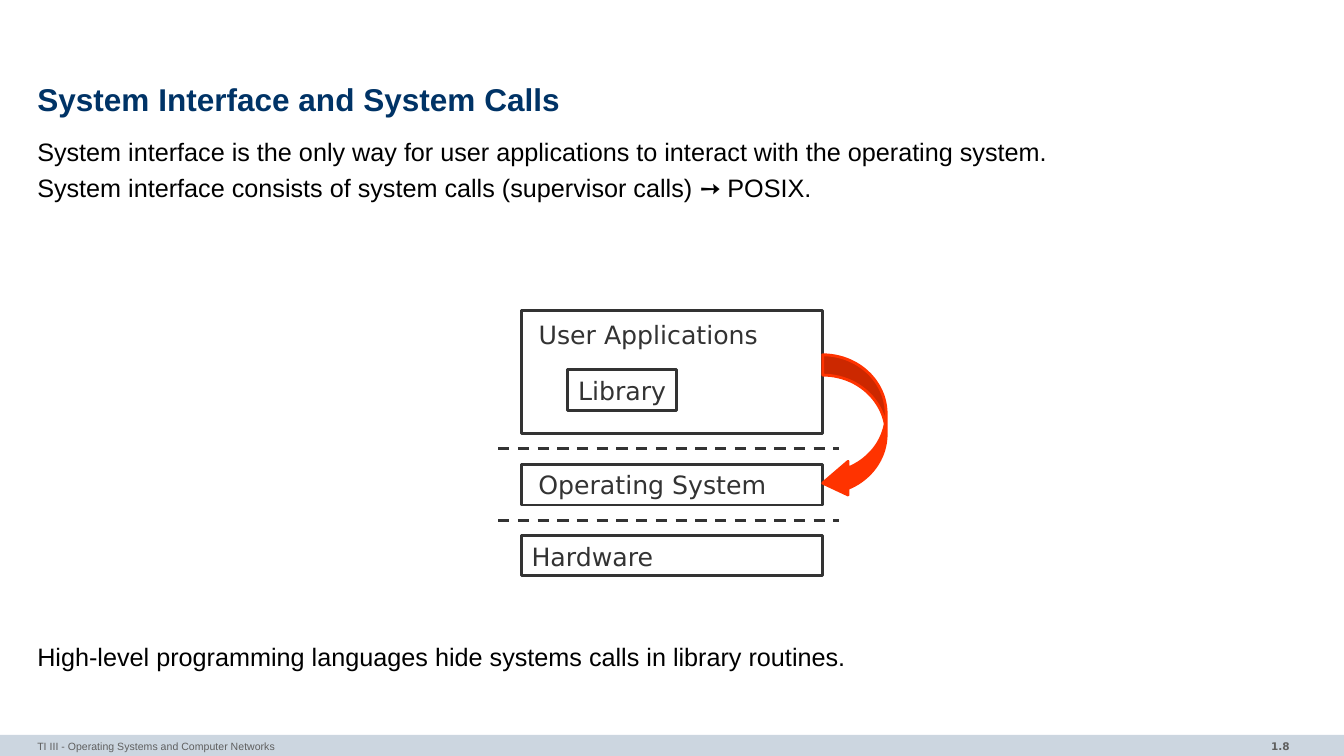
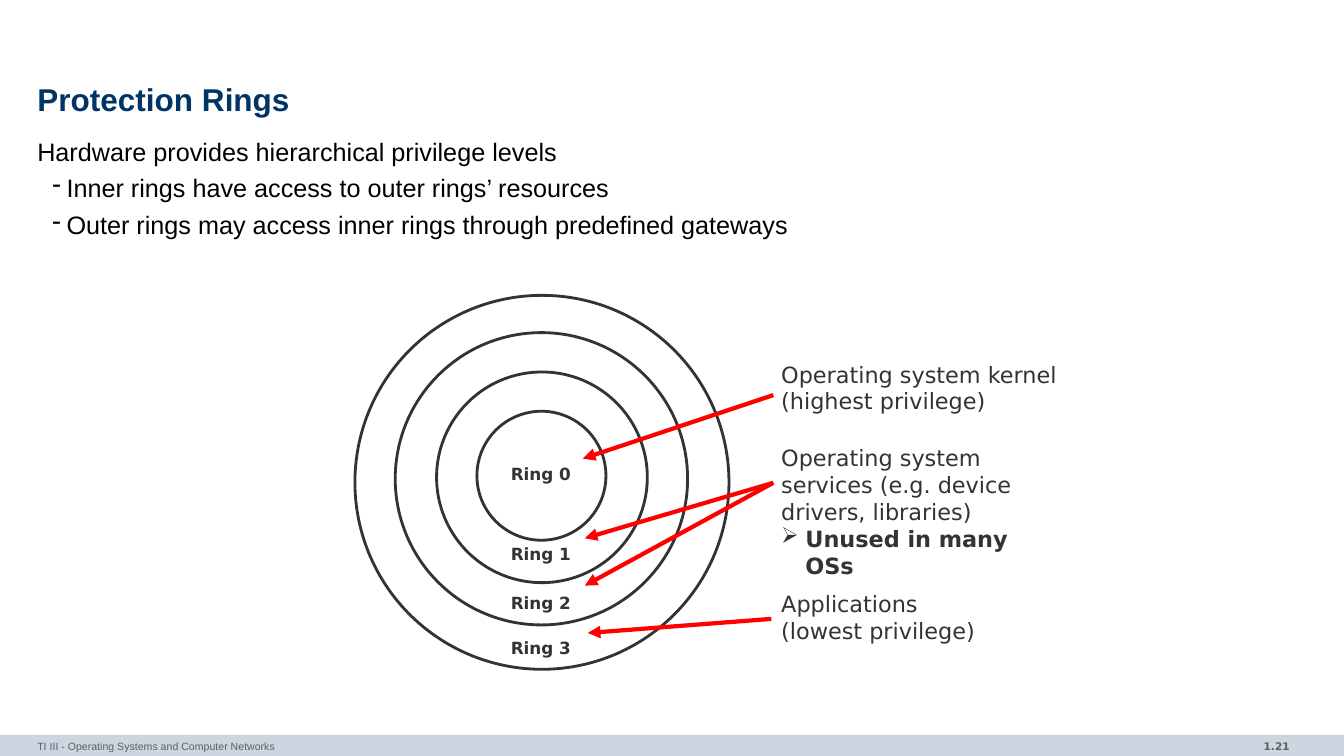
"""Build two lecture slides on system calls and protection rings."""
from lxml.etree import SubElement
from pptx import Presentation
from pptx.dml.color import RGBColor
from pptx.enum.dml import MSO_LINE
from pptx.enum.shapes import MSO_CONNECTOR, MSO_SHAPE
from pptx.enum.text import MSO_ANCHOR, MSO_AUTO_SIZE, PP_ALIGN
from pptx.oxml.ns import qn
from pptx.util import Emu, Pt

PX = 9144
WIDTH, HEIGHT = 1333, 750
MARGIN, CONTENT_W = 37, 1260
BAND_TOP, BAND_H = 729, 21

NAVY, BLACK, DARK, GREY = "003366", "000000", "333333", "5F5F5F"
BAND, ORANGE, RED = "CCD6E0", "FF3300", "FF0000"
SANS, DIAGRAM = "Arial", "DejaVu Sans"
FOOTER = "TI III - Operating Systems and Computer Networks"

CALLS_TITLE = "System Interface and System Calls"
CALLS_BODY = [
    ("System interface is the only way for user applications to interact with the operating system.", None),
    ("System interface consists of system calls (supervisor calls) ➙ POSIX.", None),
]
CALLS_CLOSING = [("High-level programming languages hide systems calls in library routines.", None)]

LAYER_X, LAYER_W, LABEL_H = 517, 299, 40
LAYERS = [
    ("User Applications", 308, 122, 312, 252),
    ("Operating System", 461, 40, 461, 260),
    ("Hardware", 531, 40, 532, 141),
]
BOUNDARIES = [445, 516]

RINGS_TITLE = "Protection Rings"
DASH = ("-", 29, 14)
RINGS_BODY = [
    ("Hardware provides hierarchical privilege levels", None),
    ("Inner rings have access to outer rings’ resources", DASH),
    ("Outer rings may access inner rings through predefined gateways", DASH),
]
RING_X, RING_CORE, RING_STEP = 537, 128, 81
RINGS = [("Ring 0", 408, 455), ("Ring 1", 369, 535), ("Ring 2", 330, 583), ("Ring 3", 293, 628)]

POINTER = ("➢", 24, 24)
NOTE_X = 765
NOTES = [
    (353, 305, 64, [("Operating system kernel", None), ("(highest privilege)", None)]),
    (436, 290, 118, [
        ("Operating system", None),
        ("services (e.g. device", None),
        ("drivers, libraries)", None),
        ("Unused in many OSs", POINTER),
    ]),
    (581, 215, 64, [("Applications", None), ("(lowest privilege)", None)]),
]
ARROWS = [
    (767, 392, 578, 455),
    (767, 479, 580, 534),
    (767, 479, 580, 581),
    (765, 614, 583, 628),
]


def px(*lengths):
    return [Emu(n * PX) for n in lengths]


def rgb(color):
    return RGBColor.from_string(color)


def add_run(p, text, size, color, font=SANS, bold=False):
    r = p.add_run()
    r.text = text
    r.font.size = Pt(size)
    r.font.name = font
    r.font.bold = bold
    r.font.color.rgb = rgb(color)


def set_bullet(p, char, indent, hang):
    pPr = p._p.get_or_add_pPr()
    pPr.set("marL", str(indent * PX))
    pPr.set("indent", str(-hang * PX))
    SubElement(pPr, qn("a:buChar")).set("char", char)


def set_insets(tf, left, top, right, bottom):
    tf.margin_left, tf.margin_top, tf.margin_right, tf.margin_bottom = px(left, top, right, bottom)


def add_box(s, box, insets=(10, 5, 10, 5), wrap=True):
    tf = s.shapes.add_textbox(*px(*box)).text_frame
    tf.word_wrap = wrap
    set_insets(tf, *insets)
    return tf


def add_lines(tf, lines, size, color, font, spacing=None, before=0):
    for i, (text, bullet) in enumerate(lines):
        p = tf.add_paragraph() if i else tf.paragraphs[0]
        if spacing:
            p.line_spacing = spacing
        if i and before:
            p.space_before = Pt(before)
        if bullet:
            set_bullet(p, *bullet)
        add_run(p, text, size, color, font, bold=bullet is POINTER)


def add_body(s, top, height, lines):
    tf = add_box(s, (MARGIN, top, CONTENT_W, height), (0, 0, 0, 0))
    add_lines(tf, lines, 18, BLACK, SANS, 1.02, 3.8)


def add_label(s, box, text, size, bold=False):
    p = add_box(s, box, wrap=False).paragraphs[0]
    p.alignment = PP_ALIGN.CENTER
    add_run(p, text, size, DARK, DIAGRAM, bold)


def add_shape(s, kind, box, fill=None, line=None):
    sp = s.shapes.add_shape(kind, *px(*box))
    sp.shadow.inherit = False
    if fill:
        sp.fill.solid()
        sp.fill.fore_color.rgb = rgb(fill)
    else:
        sp.fill.background()
    if line:
        sp.line.color.rgb = rgb(line)
        sp.line.width = Pt(2)
    else:
        sp.line.fill.background()
    return sp


def add_line(s, ends, color, width):
    c = s.shapes.add_connector(MSO_CONNECTOR.STRAIGHT, *px(*ends))
    c.line.color.rgb = rgb(color)
    c.line.width = Pt(width)
    SubElement(c._element.spPr, qn("a:effectLst"))
    return c


def add_slide(prs, title, number):
    s = prs.slides.add_slide(prs.slide_layouts[5])
    add_shape(s, MSO_SHAPE.RECTANGLE, (0, BAND_TOP, WIDTH, BAND_H), BAND)

    sp = s.shapes.title
    sp.left, sp.top, sp.width, sp.height = px(MARGIN, 78, CONTENT_W, 47)
    tf = sp.text_frame
    tf.auto_size = MSO_AUTO_SIZE.NONE
    tf.vertical_anchor = MSO_ANCHOR.MIDDLE
    set_insets(tf, 0, 0, 0, 0)
    p = tf.paragraphs[0]
    p.alignment = PP_ALIGN.LEFT
    p.line_spacing = 0.85
    add_run(p, title, 22.5, NAVY, bold=True)

    tf = add_box(s, (MARGIN, BAND_TOP, 872, BAND_H), (0, 5, 0, 5))
    add_run(tf.paragraphs[0], FOOTER, 7.5, GREY)
    p = add_box(s, (1110, BAND_TOP, 179, BAND_H)).paragraphs[0]
    p.alignment = PP_ALIGN.RIGHT
    add_run(p, number, 7.5, GREY, DIAGRAM, bold=True)
    return s


def build_calls(prs):
    s = add_slide(prs, CALLS_TITLE, "1.8")
    add_body(s, 135, 70, CALLS_BODY)
    add_body(s, 636, 36, CALLS_CLOSING)
    for text, top, height, label_top, label_w in LAYERS:
        add_shape(s, MSO_SHAPE.RECTANGLE, (LAYER_X, top, LAYER_W, height), line=DARK)
        add_label(s, (LAYER_X, label_top, label_w, LABEL_H), text, 18)
    for y in BOUNDARIES:
        add_line(s, (494, y, 832, y), DARK, 2).line.dash_style = MSO_LINE.DASH

    library = add_shape(s, MSO_SHAPE.RECTANGLE, (563, 367, 108, LABEL_H), line=DARK)
    tf = library.text_frame
    tf.word_wrap = False
    p = tf.paragraphs[0]
    p.alignment = PP_ALIGN.CENTER
    add_run(p, "Library", 18, DARK, DIAGRAM)

    box = (LAYER_X + LAYER_W, 352, 63, 144)
    call = add_shape(s, MSO_SHAPE.CURVED_LEFT_ARROW, box, ORANGE, ORANGE)
    for i, value in enumerate((0.32, 0.53, 0.4)):
        call.adjustments[i] = value


def build_rings(prs):
    s = add_slide(prs, RINGS_TITLE, "1.21")
    add_body(s, 135, 110, RINGS_BODY)
    for i, (text, top, label_top) in enumerate(RINGS):
        size = RING_CORE + i * RING_STEP
        add_shape(s, MSO_SHAPE.OVAL, (RING_X - size // 2, top, size, size), line=DARK)
        add_label(s, (RING_X - 42, label_top, 83, 30), text, 12, bold=True)
    for top, width, height, lines in NOTES:
        tf = add_box(s, (NOTE_X, top, width, height))
        add_lines(tf, lines, 16, DARK, DIAGRAM)
    for ends in ARROWS:
        ln = add_line(s, ends, RED, 3).line._get_or_add_ln()
        SubElement(ln, qn("a:tailEnd")).set("type", "triangle")


def main():
    prs = Presentation()
    prs.slide_width, prs.slide_height = px(WIDTH, HEIGHT)
    build_calls(prs)
    build_rings(prs)
    prs.save("out.pptx")


if __name__ == "__main__":
    main()
